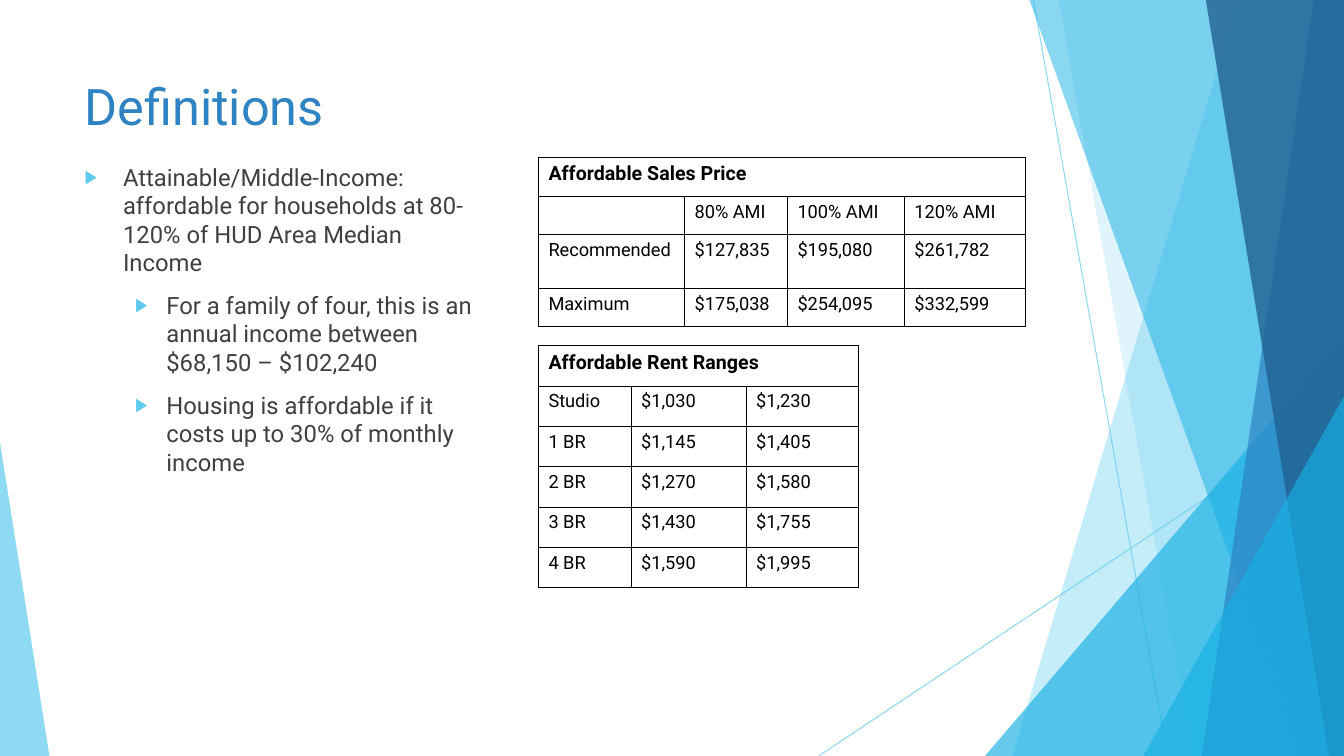
from lxml.etree import SubElement
from pptx import Presentation
from pptx.dml.color import RGBColor
from pptx.enum.shapes import MSO_CONNECTOR, MSO_SHAPE
from pptx.enum.text import MSO_ANCHOR, MSO_AUTO_SIZE
from pptx.oxml.ns import qn
from pptx.util import Inches, Pt


def paint(fill, color, node=None, alpha=100):
    """Fill with a hex colour; node is the XML whose colour turns see-through."""
    fill.solid()
    fill.fore_color.rgb = RGBColor.from_string(color)
    if node is not None:
        for tone in node.iter(qn("a:srgbClr")):
            SubElement(tone, qn("a:alpha"), val=str(alpha * 1000))


def style(font, look):
    """Set font values from a dict, with the colour as a hex string."""
    for key, value in look.items():
        if key == "color":
            paint(font.fill, value)
        else:
            setattr(font, key, value)


deck = Presentation()
deck.slide_width, deck.slide_height = Inches(13.33), Inches(7.5)
slide = deck.slides.add_slide(deck.slide_layouts[1])
shapes = slide.shapes
right, base = 13.33, 7.5
sky, cyan, blue, navy = "5FCBEF", "17B0E4", "2E83C3", "226292"

# Thin crossing lines
for x1, y1, x2, y2 in [(10.25, 0, 11.58, base), (right, 4.03, 8.12, base)]:
    line = shapes.add_connector(
        MSO_CONNECTOR.STRAIGHT, Inches(x1), Inches(y1), Inches(x2), Inches(y2))
    line.line.width = Pt(0.75)
    paint(line.line.fill, sky, line.element.spPr, 70)
    SubElement(line.element.spPr, qn("a:effectLst"))

# Facets: bands by top and bottom x, triangles by left, top, width and peak
facets = [
    ("band", (12.28, 10.04), sky, 36),
    ("band", (10.5, 11.83), sky, 20),
    ("peak", (9.77, 3.33, 3.56, 1), cyan, 66),
    ("band", (10.21, 12.91), cyan, 50),
    ("band", (13.03, 11.92), blue, 70),
    ("band", (11.96, 13.18), navy, 80),
    ("peak", (11.34, 3.93, 1.99, 1), cyan, 66),
    ("peak", (0, 4.39, 0.49, 0), sky, 70),
]
for kind, spot, color, alpha in facets:
    if kind == "band":
        top, foot = spot
        pen = shapes.build_freeform(Inches(top), 0)
        pen.add_line_segments(
            [(Inches(x), Inches(y)) for x, y in [(right, 0), (right, base), (foot, base)]])
        facet = pen.convert_to_shape()
    else:
        x, y, wide, peak = spot
        facet = shapes.add_shape(MSO_SHAPE.ISOSCELES_TRIANGLE, Inches(x), Inches(y),
                                 Inches(wide), Inches(base - y))
        facet.adjustments[0] = peak
    facet.shadow.inherit = False
    facet.line.fill.background()
    paint(facet.fill, color, facet.element.spPr, alpha)

# Title and body, placed in front of the facets
title, body = shapes.title, slide.placeholders[1]
for holder, y, wide, tall, anchor in [
        (title, 0.67, 9.4, 0.74, MSO_ANCHOR.MIDDLE), (body, 1.56, 4.09, 4.24, MSO_ANCHOR.TOP)]:
    holder.left, holder.top = Inches(0.74), Inches(y)
    holder.width, holder.height = Inches(wide), Inches(tall)
    holder.text_frame.word_wrap = True
    holder.text_frame.auto_size = MSO_AUTO_SIZE.NONE
    holder.text_frame.vertical_anchor = anchor
    shapes.element.append(holder.element)

title.text = "Definitions"
head = title.text_frame.paragraphs[0]
head.alignment = 1
style(head.runs[0].font, {"name": "Roboto", "size": Pt(36), "color": blue})

# Bulleted definitions
points = [
    (0, "Attainable/Middle-Income: affordable for households at 80-120% of HUD Area Median Income"),
    (1, "For a family of four, this is an annual income between $68,150 – $102,240"),
    (1, "Housing is affordable if it costs up to 30% of monthly income"),
]
indents = [(0.38, -0.38), (0.81, -0.31)]
body.text = "\n".join(text for level, text in points)
for i, (para, (level, text)) in enumerate(zip(body.text_frame.paragraphs, points)):
    para.level = level
    props = para._p.get_or_add_pPr()
    for key, size in zip(("marL", "indent"), indents[level]):
        props.set(key, str(Inches(size)))
    SubElement(SubElement(props, qn("a:buClr")), qn("a:srgbClr"), val=sky)
    SubElement(props, qn("a:buSzPct"), val="80000")
    SubElement(props, qn("a:buChar"), char="▶")
    para.space_before = Pt(10 if i else 0)
    style(para.runs[0].font, {"name": "Roboto", "size": Pt(17), "color": "404040"})

# Price and rent tables, each under a merged heading row
prices = [
    ["Affordable Sales Price", "", "", ""],
    ["", "80% AMI", "100% AMI", "120% AMI"],
    ["Recommended", "$127,835", "$195,080", "$261,782"],
    ["Maximum", "$175,038", "$254,095", "$332,599"],
]
rents = [
    ["Affordable Rent Ranges", "", ""],
    ["Studio", "$1,030", "$1,230"],
    ["1 BR", "$1,145", "$1,405"],
    ["2 BR", "$1,270", "$1,580"],
    ["3 BR", "$1,430", "$1,755"],
    ["4 BR", "$1,590", "$1,995"],
]
tables = [
    (prices, 1.56, [1.45, 1.02, 1.16, 1.2], [0.39, 0.38, 0.53, 0.38]),
    (rents, 3.43, [0.92, 1.14, 1.11], [0.4] * 6),
]
for data, y, widths, heights in tables:
    table = shapes.add_table(
        len(data), len(widths), Inches(5.34), Inches(y),
        Inches(sum(widths)), Inches(sum(heights))).table
    table.first_row = table.horz_banding = False
    for col, wide in zip(table.columns, widths):
        col.width = Inches(wide)
    for r, row in enumerate(data):
        table.rows[r].height = Inches(heights[r])
        for c, text in enumerate(row):
            cell = table.cell(r, c)
            props = cell._tc.get_or_add_tcPr()
            for side in ("lnL", "lnR", "lnT", "lnB"):
                edge = SubElement(props, qn("a:" + side), w=str(Pt(0.75)))
                SubElement(SubElement(edge, qn("a:solidFill")), qn("a:srgbClr"), val="000000")
            cell.fill.background()
            cell.text = text
            style(cell.text_frame.paragraphs[0].font, {
                "name": "Roboto", "size": Pt(13 if r else 14), "bold": r == 0, "color": "000000"})
    table.cell(0, 0).merge(table.cell(0, len(widths) - 1))

deck.save("out.pptx")
